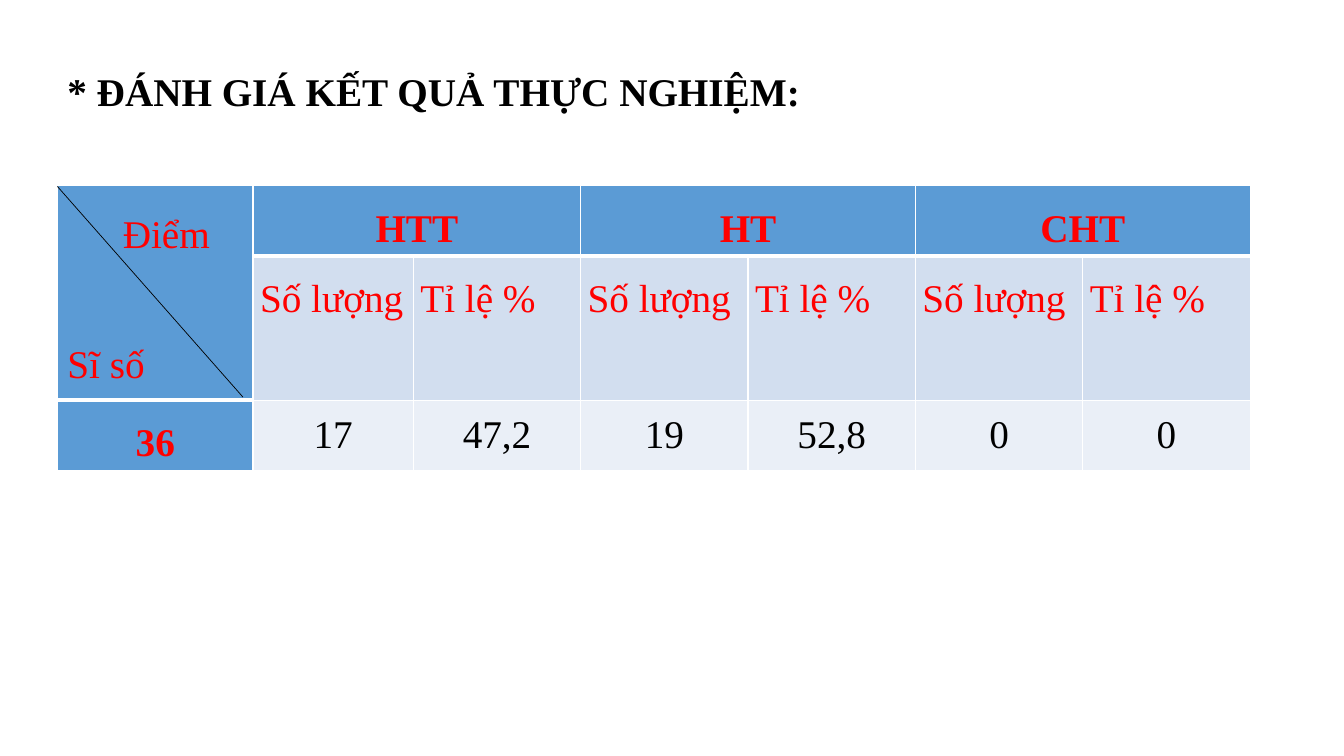
"""Build the slide with the table of trial results."""
from pptx import Presentation
from pptx.dml.color import RGBColor as RGB
from pptx.enum.shapes import MSO_CONNECTOR as Link
from pptx.enum.text import MSO_AUTO_SIZE as Fit, PP_ALIGN as Align
from pptx.util import Inches, Pt
from lxml.etree import SubElement as Sub
from pptx.oxml.ns import qn

INK = {"red": "FF0000", "black": "000000", "white": "FFFFFF",
       "head": "5B9BD5", "band": "D2DEEF", "pale": "EAEFF7"}
FONT = "Times New Roman"
SIZE = 28


def tint(name):
    return RGB.from_string(INK[name])


class Board:
    def __init__(self, slide):
        self.slide = slide

    def put(self, frame, text, ink, bold=False, align=None, line=1.07, after=8):
        para = frame.paragraphs[0]
        para.alignment = align
        para.line_spacing = line
        para.space_after = Pt(after)
        run = para.add_run()
        run.text = text
        font = run.font
        font.name, font.size, font.bold = FONT, Pt(SIZE), bold
        font.color.rgb = tint(ink)

    def label(self, text, spot, ink, wrap=True, **look):
        box = self.slide.shapes.add_textbox(*map(Inches, spot))
        frame = box.text_frame
        frame.word_wrap = wrap
        frame.auto_size = Fit.NONE if wrap else Fit.SHAPE_TO_FIT_TEXT
        self.put(frame, text, ink, **look)

    def rule(self, ends, ink, width):
        line = self.slide.shapes.add_connector(Link.STRAIGHT, *map(Inches, ends))
        line.line.color.rgb = tint(ink)
        line.line.width = Pt(width)
        Sub(line._element.spPr, qn("a:effectLst"))

    def grid(self, spot, cols, rows):
        size = sum(cols), sum(rows)
        table = self.slide.shapes.add_table(
            len(rows), len(cols), *map(Inches, (*spot, *size))).table
        for col, wide in zip(table.columns, cols):
            col.width = Inches(wide)
        for row, high in zip(table.rows, rows):
            row.height = Inches(high)
        return table

    def paint(self, cell, fill, top=1, base=1):
        props = cell._tc.get_or_add_tcPr()
        for side, width in zip("LRTB", (1, 1, top, base)):
            edge = Sub(props, qn("a:ln" + side), w=str(Pt(width)))
            paint = Sub(edge, qn("a:solidFill"))
            Sub(paint, qn("a:srgbClr"), val=INK["white"])
        cell.fill.solid()
        cell.fill.fore_color.rgb = tint(fill)

    def fill(self, cell, text, ink, **look):
        cell.margin_left = cell.margin_right = Inches(0.07)
        cell.margin_top = cell.margin_bottom = 0
        self.put(cell.text_frame, text, ink, **look)


def main():
    deck = Presentation()
    deck.slide_width, deck.slide_height = Inches(13.33), Inches(7.5)
    board = Board(deck.slides.add_slide(deck.slide_layouts[6]))

    table = board.grid((0.57, 1.84), [1.94, 1.59] + [1.66] * 5, [0.7, 1.43, 0.7])
    for col in range(7):
        side = col == 0
        board.paint(table.cell(0, col), "head", base=1 if side else 3)
        board.paint(table.cell(1, col), "head" if side else "band",
                    top=1 if side else 3, base=3 if side else 1)
        board.paint(table.cell(2, col), "head" if side else "pale",
                    top=3 if side else 1)
    table.cell(0, 0).merge(table.cell(1, 0))

    bold = dict(bold=True, align=Align.CENTER, line=1.5, after=0)
    for num, grade in enumerate(("HTT", "HT", "CHT")):
        col = 1 + 2 * num
        table.cell(0, col).merge(table.cell(0, col + 1))
        board.fill(table.cell(0, col), grade, "red", **bold)
        for step, text in enumerate(("Số lượng", "Tỉ lệ %")):
            board.fill(table.cell(1, col + step), text, "red",
                       align=Align.JUSTIFY, line=1.5, after=0)
    board.fill(table.cell(2, 0), "36", "red", **bold)
    for col, text in enumerate(("17", "47,2", "19", "52,8", "0", "0"), 1):
        board.fill(table.cell(2, col), text, "black", align=Align.CENTER, line=1.3)

    board.label("Điểm", (1.12, 1.99, 1.35, 0.64), "red")
    board.label("Sĩ số", (0.57, 3.28, 1.49, 0.54), "red")
    board.rule((0.57, 1.85, 2.41, 3.94), "black", 0.5)
    board.label("* ĐÁNH GIÁ KẾT QUẢ THỰC NGHIỆM: ", (0.57, 0.55, 7.64, 0.6),
                "black", wrap=False, bold=True, align=Align.JUSTIFY, line=1.15)
    deck.save("out.pptx")


if __name__ == "__main__":
    main()
